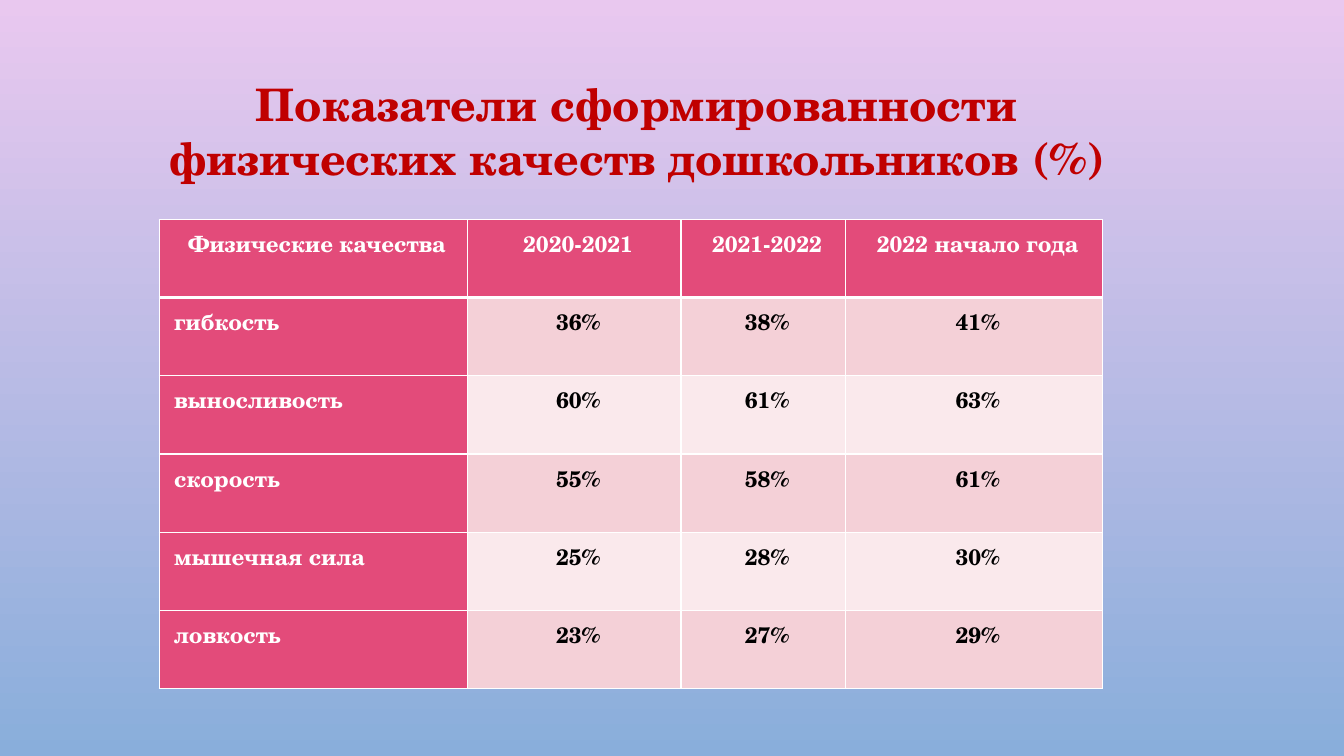
from lxml import etree
from pptx import Presentation
from pptx.dml.color import RGBColor
from pptx.enum.text import MSO_ANCHOR, MSO_AUTO_SIZE, PP_ALIGN
from pptx.oxml.ns import qn
from pptx.util import Cm, Pt

CENTER, JUSTIFY = PP_ALIGN.CENTER, PP_ALIGN.JUSTIFY
MIDDLE = MSO_ANCHOR.MIDDLE
GROW = MSO_AUTO_SIZE.SHAPE_TO_FIT_TEXT

WHITE, BLACK, RED = "FFFFFF", "000000", "C00000"
PINK, BANDS = "E34B7A", ("F4D0D7", "FAE9EC")
SKY = ("E9C8EF", "89AEDB")

TITLE = "Показатели сформированности физических качеств дошкольников (%)"
INDICATORS = [
    ("Физические качества", "2020-2021", "2021-2022", "2022 начало года"),
    ("гибкость", "36%", "38%", "41%"),
    ("выносливость", "60%", "61%", "63%"),
    ("скорость", "55%", "58%", "61%"),
    ("мышечная сила", "25%", "28%", "30%"),
    ("ловкость", "23%", "27%", "29%"),
]
COLUMN_WIDTHS = (7.77, 5.38, 4.14, 6.48)
ROW_HEIGHT = 1.97


def rgb(value):
    return RGBColor.from_string(value)


def write(frame, text, *, size, color, font, align=CENTER, spacing=None, indent=None):
    paragraph = frame.paragraphs[0]
    paragraph.alignment = align
    if spacing:
        paragraph.line_spacing = spacing
    if indent:
        properties = paragraph._p.get_or_add_pPr()
        properties.set("marL", str(Cm(indent)))
        properties.set("indent", "0")
    run = paragraph.add_run()
    run.text = text
    run.font.name = font
    run.font.size = Pt(size)
    run.font.bold = True
    run.font.color.rgb = rgb(color)


def set_borders(cell, color, **widths):
    """Draw the cell's sides, given as L, R, T, B widths in points."""
    properties = cell._tc.get_or_add_tcPr()
    for side, width in widths.items():
        line = etree.SubElement(properties, qn(f"a:ln{side}"), w=str(Pt(width)))
        fill = etree.SubElement(line, qn("a:solidFill"))
        etree.SubElement(fill, qn("a:srgbClr"), val=color)


class SlideBuilder:
    font = "TeX Gyre Schola"

    def __init__(self, presentation):
        self.slide = presentation.slides.add_slide(presentation.slide_layouts[6])

    def background(self, colors):
        fill = self.slide.background.fill
        fill.gradient()
        fill.gradient_angle = 270
        for position, (stop, color) in enumerate(zip(fill.gradient_stops, colors)):
            stop.position = position
            stop.color.rgb = rgb(color)

    def title(self, text, left, top, width, height):
        box = self.slide.shapes.add_textbox(Cm(left), Cm(top), Cm(width), Cm(height))
        frame = box.text_frame
        frame.word_wrap = True
        frame.auto_size = GROW
        frame.vertical_anchor = MIDDLE
        write(frame, text, size=32, color=RED, font=self.font)

    def table(self, rows, left, top, widths, row_height):
        table = self.slide.shapes.add_table(
            len(rows), len(widths), Cm(left), Cm(top),
            Cm(sum(widths)), Cm(row_height * len(rows))).table
        for column, width in zip(table.columns, widths):
            column.width = Cm(width)
        for r, values in enumerate(rows):
            table.rows[r].height = Cm(row_height)
            for c, value in enumerate(values):
                self.cell(table.cell(r, c), value, r, c)

    def cell(self, cell, value, row, column):
        is_heading = row == 0 or column == 0
        cell.margin_left = cell.margin_right = Cm(0.18)
        cell.margin_top = cell.margin_bottom = 0
        set_borders(cell, WHITE, L=1, R=1,
                    T=3 if row == 1 else 1, B=3 if row == 0 else 1)
        cell.fill.solid()
        cell.fill.fore_color.rgb = rgb(PINK if is_heading else BANDS[(row - 1) % 2])
        write(cell.text_frame, value, size=16, font=self.font,
              color=WHITE if is_heading else BLACK,
              align=JUSTIFY if row and column == 0 else CENTER,
              spacing=1.2, indent=0.2)


def main():
    presentation = Presentation()
    presentation.slide_width = Cm(33.87)
    presentation.slide_height = Cm(19.05)
    builder = SlideBuilder(presentation)
    builder.background(SKY)
    builder.table(INDICATORS, 4.01, 5.53, COLUMN_WIDTHS, ROW_HEIGHT)
    builder.title(TITLE, 3.1, 1.8, 25.9, 3)
    presentation.save("out.pptx")


if __name__ == "__main__":
    main()
